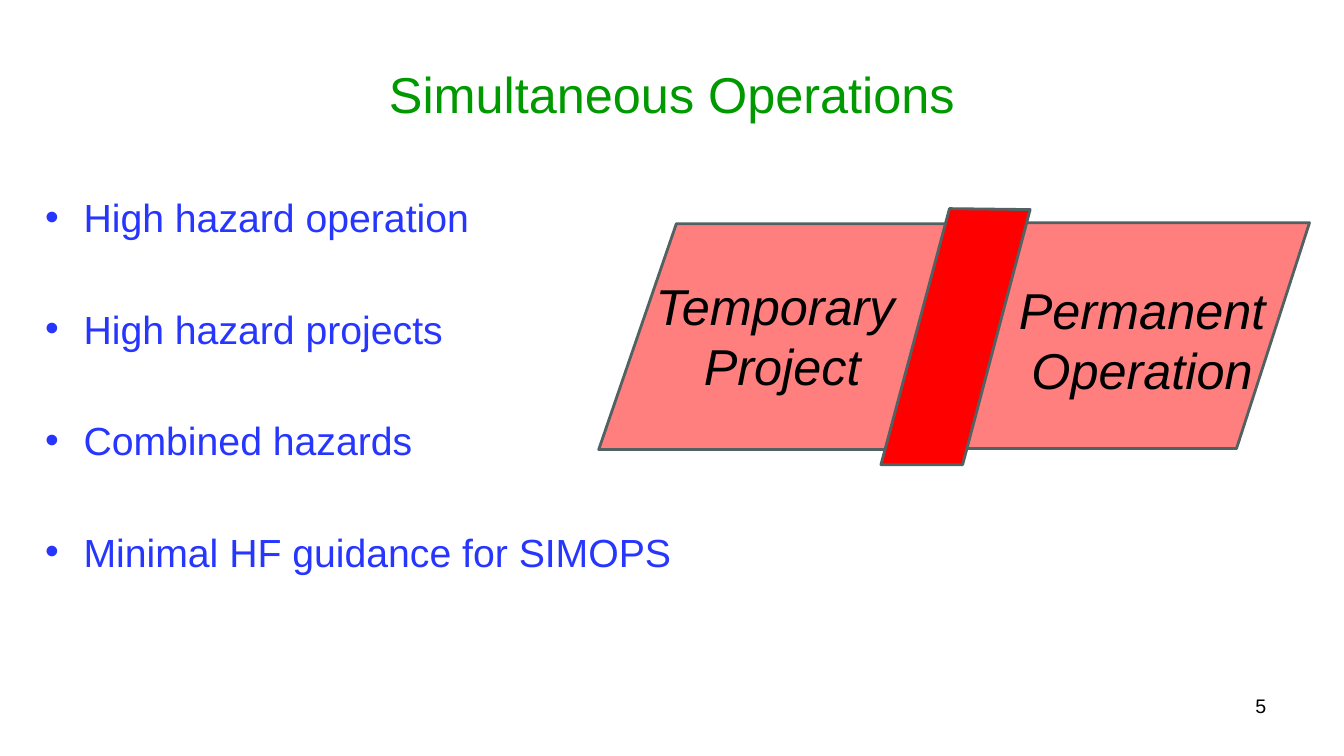
from lxml import etree
from pptx import Presentation
from pptx import util as u
from pptx.dml.color import RGBColor
from pptx.enum import shapes, text
from pptx.oxml.ns import qn


def colour(value):
    return RGBColor.from_string(value)


class SlideBuilder:
    """Draws styled elements on one slide, with lengths in percent of its size."""

    FONT = "Arial"
    OUTLINE = "526263"
    RED = "FF0000"
    INDENT = u.Inches(0.38)

    def __init__(self, presentation):
        self.width = presentation.slide_width
        self.height = presentation.slide_height
        self.slide = presentation.slides.add_slide(presentation.slide_layouts[6])

    def point(self, x, y):
        return round(self.width * x / 100), round(self.height * y / 100)

    def box(self, left, top, width, height):
        return *self.point(left, top), *self.point(width, height)

    def text(self, area, lines, size, color="000000", align="CENTER",
             anchor="TOP", gap=0, bullet=None, italic=False):
        frame = self.slide.shapes.add_textbox(*self.box(*area)).text_frame
        frame.word_wrap = True
        frame.vertical_anchor = getattr(text.MSO_ANCHOR, anchor)
        for index, line in enumerate(lines):
            paragraph = frame.paragraphs[0] if index == 0 else frame.add_paragraph()
            paragraph.alignment = getattr(text.PP_ALIGN, align)
            if index and gap:
                paragraph.space_before = u.Pt(gap)
            if bullet:
                self.bullet(paragraph, bullet)
            run = paragraph.add_run()
            run.text = line
            formats = {"name": self.FONT, "size": u.Pt(size), "italic": italic}
            for name, value in formats.items():
                setattr(run.font, name, value)
            run.font.color.rgb = colour(color)

    def bullet(self, paragraph, character):
        properties = paragraph._p.get_or_add_pPr()
        properties.set("marL", str(self.INDENT))
        properties.set("indent", str(-self.INDENT))
        etree.SubElement(properties, qn("a:buFont"), typeface=self.FONT)
        etree.SubElement(properties, qn("a:buChar"), char=character)

    def paint(self, shape, opacity=100):
        shape.shadow.inherit = False
        shape.fill.solid()
        shape.fill.fore_color.rgb = colour(self.RED)
        shape.line.color.rgb = colour(self.OUTLINE)
        shape.line.width = u.Pt(2)
        if opacity < 100:
            fill = shape._element.spPr.find(qn("a:solidFill"))
            etree.SubElement(fill[0], qn("a:alpha"), val=str(opacity * 1000))

    def parallelogram(self, area):
        kind = shapes.MSO_SHAPE.FLOWCHART_DATA
        self.paint(self.slide.shapes.add_shape(kind, *self.box(*area)), opacity=50)

    def polygon(self, corners):
        first, *others = [self.point(*corner) for corner in corners]
        builder = self.slide.shapes.build_freeform(*first)
        builder.add_line_segments(others, close=True)
        self.paint(builder.convert_to_shape())


def main():
    presentation = Presentation()
    presentation.slide_width = u.Inches(13.33)
    presentation.slide_height = u.Inches(7.5)
    slide = SlideBuilder(presentation)

    slide.text((5, 4, 90, 16.67), ["Simultaneous Operations"], 36,
               color="009900", anchor="MIDDLE")
    hazards = ["High hazard operation", "High hazard projects",
               "Combined hazards", "Minimal HF guidance for SIMOPS"]
    slide.text((2.63, 24.93, 49.5, 53.33), hazards, 28, color="2736FF",
               align="LEFT", gap=46, bullet="•")
    slide.text((71.63, 91.07, 23.33, 6.93), ["5"], 14, align="RIGHT")

    for area in [(44.55, 29.6, 28.88, 29.87), (70.28, 29.47, 27.15, 29.87)]:
        slide.parallelogram(area)
    slide.polygon([(65.55, 61.47), (70.65, 27.6), (76.65, 27.73), (71.63, 61.47)])

    labels = [(74.78, 36.27, ["Permanent Operation"]),
              (48, 35.73, ["Temporary ", "Project"])]
    for left, top, lines in labels:
        slide.text((left, top, 20.4, 17.47), lines, 36, italic=True)

    presentation.save("out.pptx")


if __name__ == "__main__":
    main()
